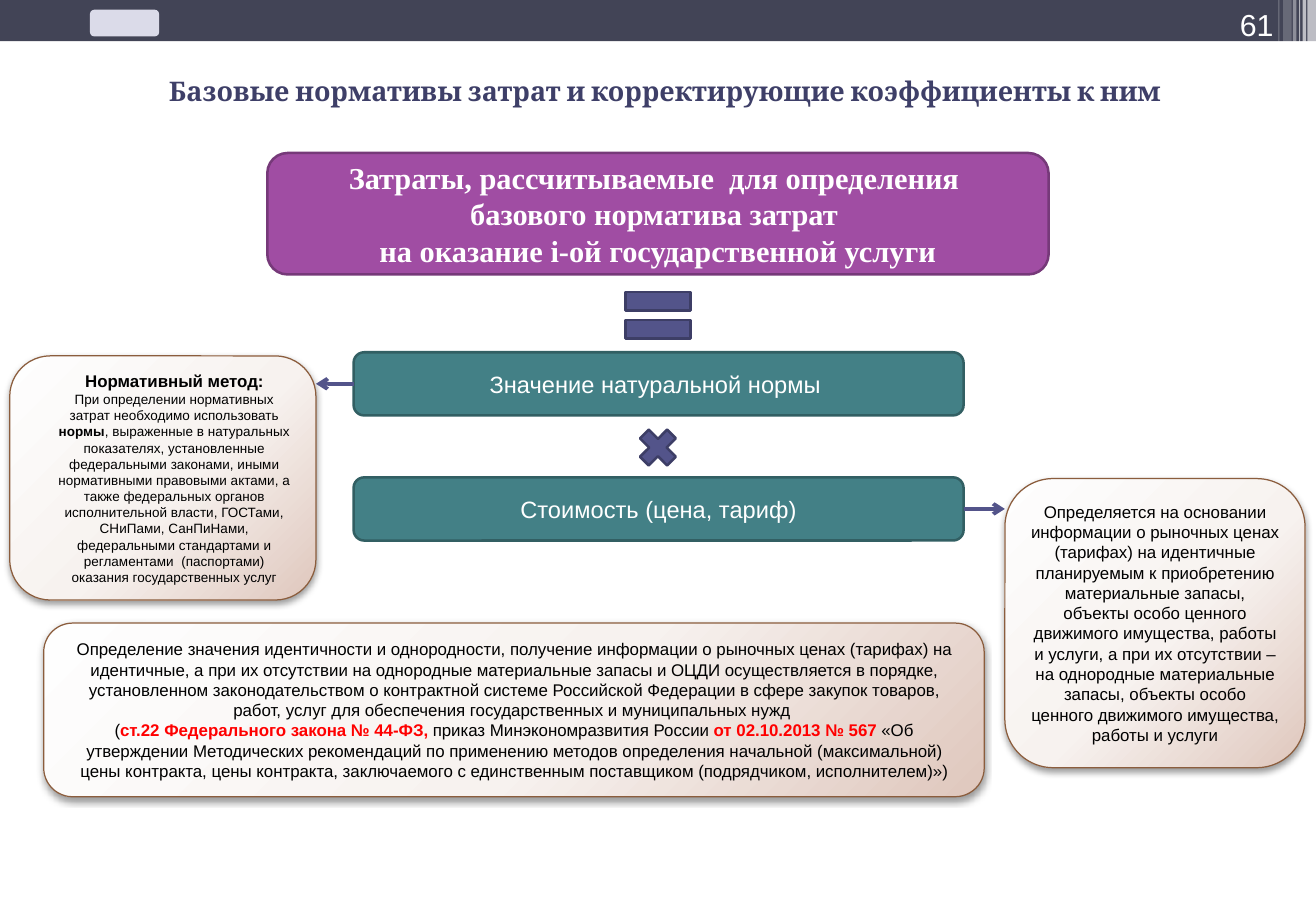
from lxml import etree
from pptx import Presentation
from pptx.dml.color import RGBColor
from pptx.enum.shapes import MSO_CONNECTOR, MSO_SHAPE
from pptx.enum.text import MSO_ANCHOR, MSO_AUTO_SIZE, PP_ALIGN
from pptx.oxml import parse_xml
from pptx.oxml.ns import nsdecls, qn
from pptx.util import Pt

RECT, ROUND = MSO_SHAPE.RECTANGLE, MSO_SHAPE.ROUNDED_RECTANGLE
EQUAL, TIMES = MSO_SHAPE.MATH_EQUAL, MSO_SHAPE.MATH_MULTIPLY
STRAIGHT = MSO_CONNECTOR.STRAIGHT
MIDDLE, BOTTOM = MSO_ANCHOR.MIDDLE, MSO_ANCHOR.BOTTOM
CENTER, RIGHT = PP_ALIGN.CENTER, PP_ALIGN.RIGHT
NO_FIT = MSO_AUTO_SIZE.NONE

PX = 9144  # 100 px to the inch
WIDTH, HEIGHT = 1083, 750
COLORS = {
    "white": "FFFFFF", "black": "000000", "red": "FF0000",
    "bar": "424456", "mark": "DBDBE9", "title": "3E3F68",
    "purple": "A04DA3", "plum": "763979",
    "teal": "438086", "pine": "325F63",
    "indigo": "53548A", "navy": "3D3E66", "brown": "8B5D3D",
}
SHADE = f"""<a:gradFill {nsdecls('a')} rotWithShape="1"><a:gsLst>
<a:gs pos="0"><a:srgbClr val="FEFEFE"/></a:gs>
<a:gs pos="55000"><a:srgbClr val="F7F2EF"/></a:gs>
<a:gs pos="100000"><a:srgbClr val="DFC7BD"/></a:gs></a:gsLst>
<a:path path="circle"><a:fillToRect l="-40000" t="-90000" r="140000" b="190000"/>
</a:path></a:gradFill>"""
SHADOW = f"""<a:outerShdw {nsdecls('a')} blurRad="52070" dist="25400" dir="5400000"
rotWithShape="0"><a:srgbClr val="000000"><a:alpha val="40000"/></a:srgbClr></a:outerShdw>"""


def rgb(name):
    return RGBColor.from_string(COLORS[name])


def scale(*sizes):
    return [size * PX for size in sizes]


class Deck:
    def __init__(self):
        self.prs = Presentation()
        self.prs.slide_width, self.prs.slide_height = scale(WIDTH, HEIGHT)
        self.slide = self.prs.slides.add_slide(self.prs.slide_layouts[5])

    def text(self, shape, paras, size, color, font="Arial", bold=False,
             align=CENTER, anchor=MIDDLE, wrap=True, indent=0):
        """Each paragraph is a string or a list of (text, changes) runs."""
        frame = shape.text_frame
        frame.auto_size, frame.word_wrap = NO_FIT, wrap
        frame.vertical_anchor = anchor
        for i, runs in enumerate(paras):
            para = frame.add_paragraph() if i else frame.paragraphs[0]
            para.alignment = align
            if indent:
                para._p.get_or_add_pPr().set("marL", str(indent * PX))
            if isinstance(runs, str):
                runs = [(runs, {})]
            for words, change in runs:
                run = para.add_run()
                run.text = words
                run.font.name = font
                run.font.size = Pt(change.get("size", size))
                run.font.bold = change.get("bold", bold)
                run.font.color.rgb = rgb(change.get("color", color))

    def title(self, box, words):
        shape = self.slide.shapes.title
        shape.left, shape.top, shape.width, shape.height = scale(*box)
        self.text(shape, [words], 16, "title", "Cambria", True)

    def label(self, box, words, **style):
        self.text(self.slide.shapes.add_textbox(*scale(*box)), [words], **style)

    def shape(self, kind, box, fill, line=None, width=1.5, alpha=None):
        shape = self.slide.shapes.add_shape(kind, *scale(*box))
        shape.shadow.inherit = False
        shape.fill.solid()
        shape.fill.fore_color.rgb = rgb(fill)
        if alpha:
            color = shape._element.spPr.find(qn("a:solidFill"))[0]
            etree.SubElement(color, qn("a:alpha")).set("val", str(alpha * 1000))
        if line:
            shape.line.color.rgb = rgb(line)
            shape.line.width = Pt(width)
        else:
            shape.line.fill.background()
        return shape

    def card(self, box, paras, indent=0):
        shape = self.shape(ROUND, box, "white", "brown", 0.75)
        props = shape._element.spPr
        props.replace(props.find(qn("a:solidFill")), parse_xml(SHADE))
        props.find(qn("a:effectLst")).append(parse_xml(SHADOW))
        self.text(shape, paras, 10, "black", indent=indent)

    def arrow(self, start, end, y):
        line = self.slide.shapes.add_connector(STRAIGHT, *scale(start, y, end, y))
        line.line.color.rgb = rgb("indigo")
        line.line.width = Pt(2.25)
        props = line._element.spPr
        etree.SubElement(props.find(qn("a:ln")), qn("a:tailEnd")).set("type", "arrow")
        etree.SubElement(props, qn("a:effectLst"))


def main():
    deck = Deck()
    strong, red = {"bold": True}, {"bold": True, "color": "red"}

    # Top bar with pale stripes and a plain mark
    deck.shape(RECT, (0, 0, WIDTH, 34), "bar")
    for x, width, height, alpha in (
            (1076, 7, 68, 65), (1072, 3, 68, 65), (1069, 1, 68, 60),
            (1064, 3, 68, 40), (1056, 7, 64, 20), (1052, 1, 64, 30)):
        deck.shape(RECT, (x, 0, width, height), "white", alpha=alpha)
    deck.shape(ROUND, (74, 8, 57, 22), "mark")
    deck.label((968, 0, 90, 40), "61", size=18, color="white",
               align=RIGHT, anchor=BOTTOM)

    deck.title((51, 16, 993, 117),
               "Базовые нормативы затрат и корректирующие коэффициенты к ним")

    # Purchase rules
    deck.card((36, 513, 774, 143), [
        "Определение значения идентичности и однородности, получение информации о "
        "рыночных ценах (тарифах) на идентичные, а при их отсутствии на однородные "
        "материальные запасы и ОЦДИ осуществляется в порядке, установленном "
        "законодательством о контрактной системе Российской Федерации в сфере закупок "
        "товаров, работ, услуг для обеспечения государственных и муниципальных нужд ",
        [("(", {}), ("ст.22 Федерального закона № 44-ФЗ, ", red),
         ("приказ Минэкономразвития России ", {}), ("от 02.10.2013 № 567 ", red),
         ("«Об утверждении Методических рекомендаций по применению методов определения "
          "начальной (максимальной) цены контракта, цены контракта, заключаемого с "
          "единственным поставщиком (подрядчиком, исполнителем)»)", {})]])

    # Formula: costs = norm x price
    costs = deck.shape(ROUND, (220, 126, 643, 100), "purple", "plum")
    deck.text(costs, ["Затраты, рассчитываемые  для определения ",
                      "базового норматива затрат ",
                      "на оказание i-ой государственной услуги"],
              18, "white", "Times New Roman", True, wrap=False)
    for y, words in ((290, "Значение натуральной нормы "),
                     (393, "Стоимость (цена, тариф)")):
        factor = deck.shape(ROUND, (291, y, 502, 52), "teal", "pine")
        deck.text(factor, [words], 14, "white")
    deck.shape(EQUAL, (505, 227, 73, 65), "indigo", "navy")
    deck.shape(TIMES, (520, 347, 43, 43), "indigo", "navy")

    # Side notes
    small = {"size": 8}
    deck.card((8, 293, 252, 201), [
        [("Нормативный метод:", strong)],
        [("При определении нормативных затрат необходимо использовать ", small),
         ("нормы", {**small, **strong}),
         (", выраженные в натуральных показателях, установленные федеральными "
          "законами, иными нормативными правовыми актами, а также федеральных органов "
          "исполнительной власти, ГОСТами, СНиПами, СанПиНами, федеральными "
          "стандартами и регламентами  (паспортами) оказания государственных услуг",
          small)]], indent=19)
    deck.card((827, 394, 247, 238), [
        "Определяется на основании информации о рыночных ценах (тарифах) на идентичные "
        "планируемым к приобретению материальные запасы, объекты особо ценного "
        "движимого имущества, работы и услуги, а при их отсутствии – на однородные "
        "материальные запасы, объекты особо ценного движимого имущества, работы и услуги"])
    deck.arrow(291, 260, 316)
    deck.arrow(793, 827, 419)

    deck.prs.save("out.pptx")


if __name__ == "__main__":
    main()
